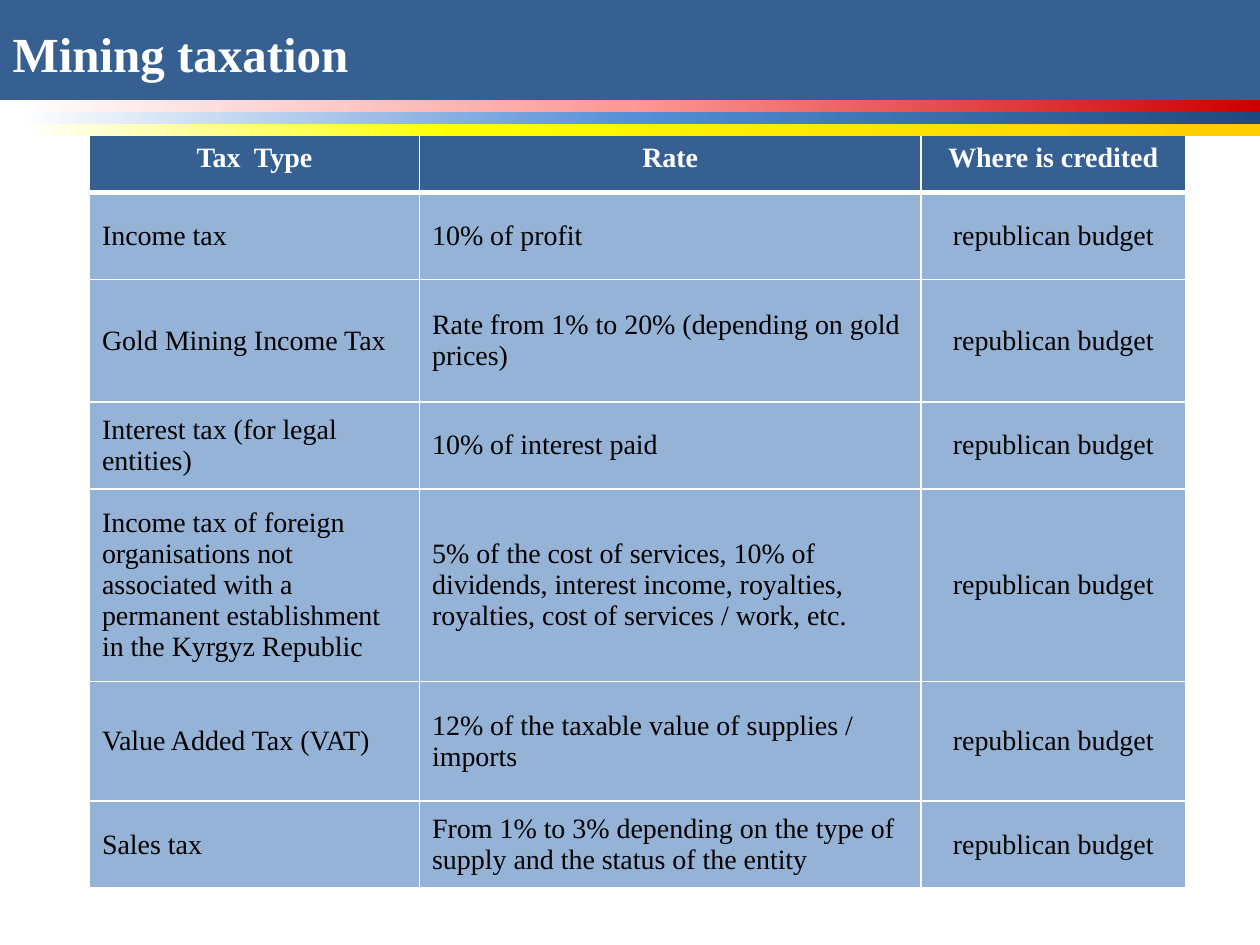
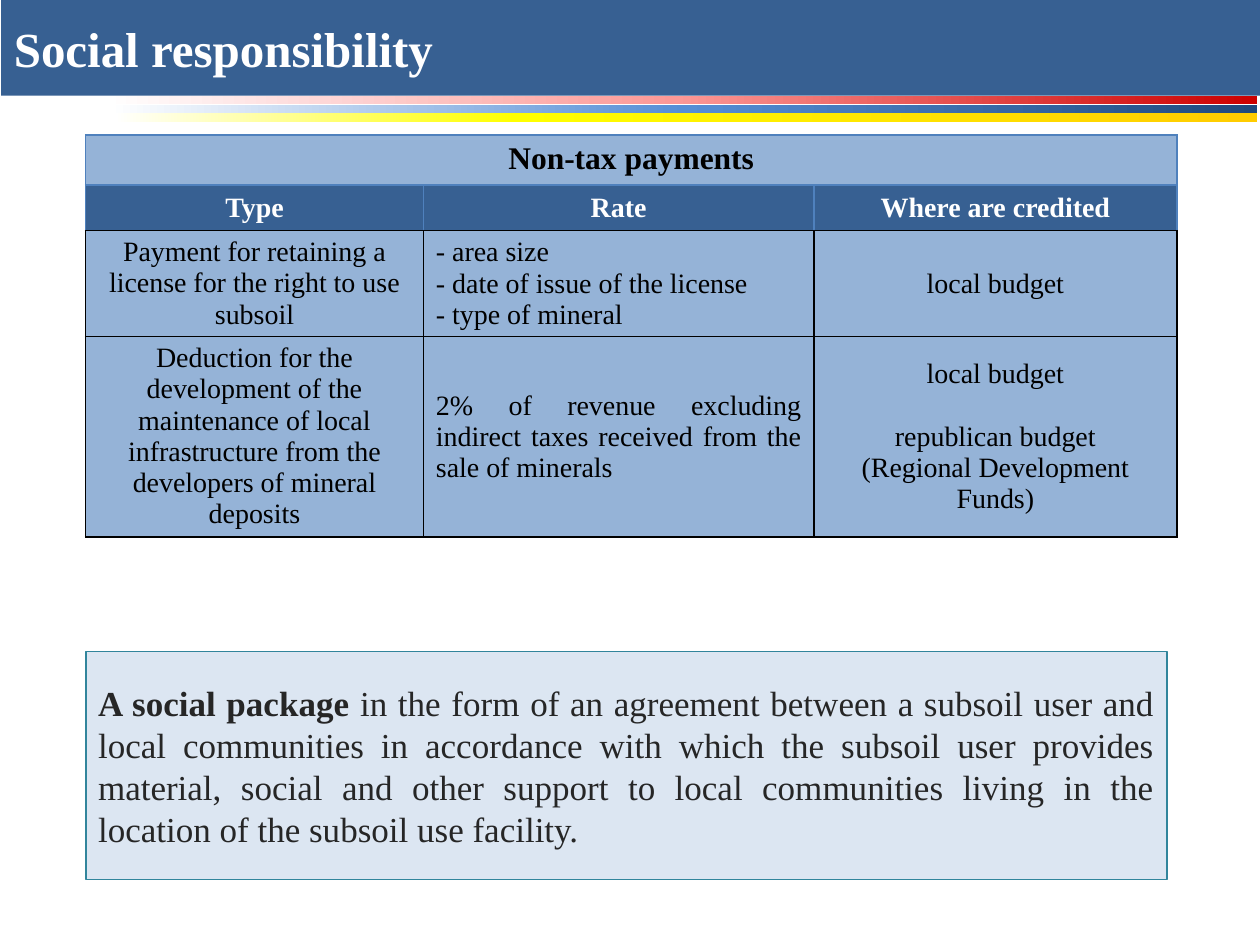
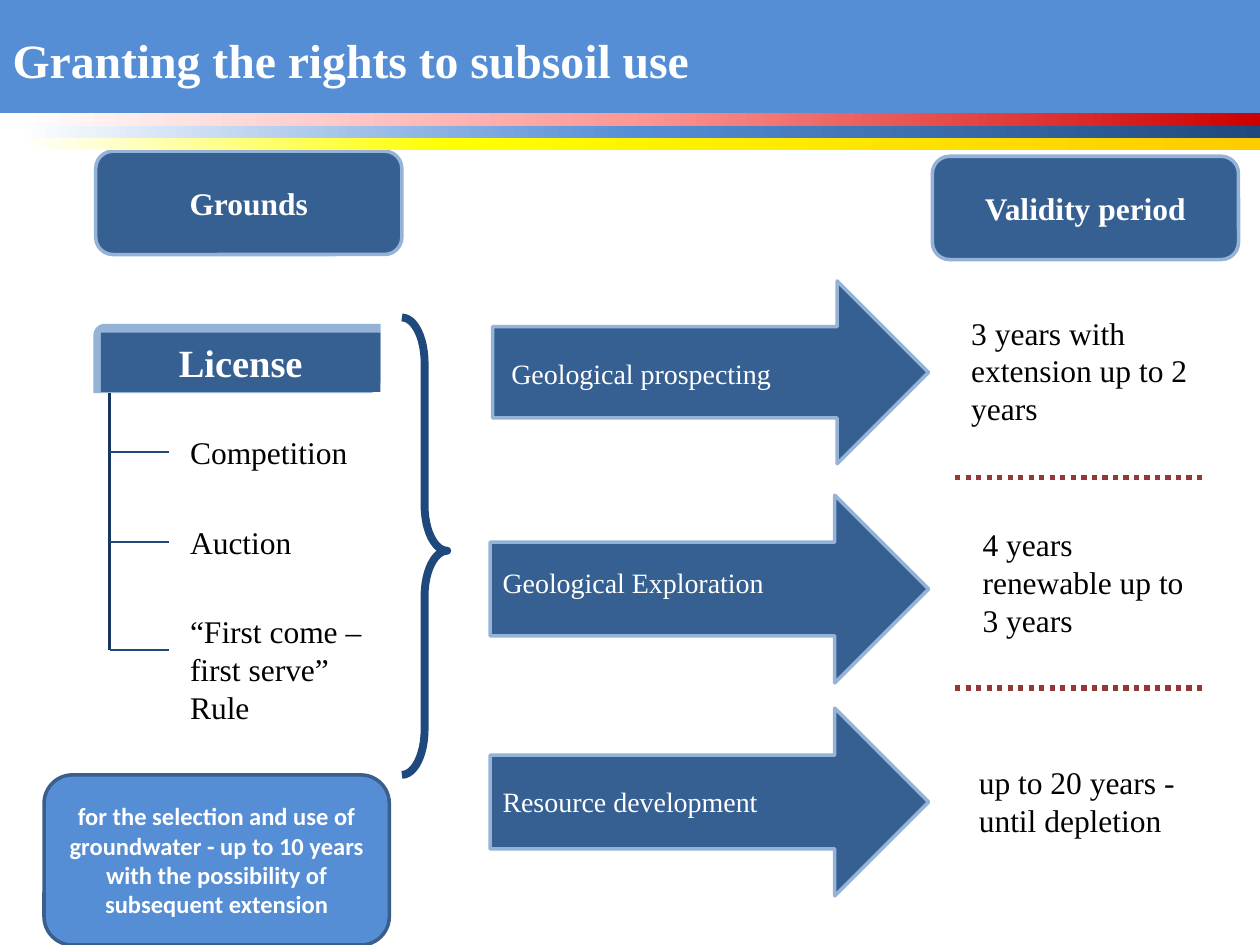
from dataclasses import dataclass

from lxml.etree import SubElement
from pptx import Presentation
from pptx.dml.color import RGBColor
from pptx.enum.dml import MSO_LINE
from pptx.enum.shapes import MSO_CONNECTOR, MSO_SHAPE
from pptx.enum.text import MSO_ANCHOR, MSO_AUTO_SIZE, PP_ALIGN
from pptx.oxml.ns import qn
from pptx.util import Inches, Pt


@dataclass(frozen=True)
class Theme:
    """Colours, fonts and type sizes shared by the slides."""

    navy: str = "376092"
    blue: str = "558ED5"
    pale: str = "95B3D7"
    mist: str = "DCE6F2"
    ink: str = "1F497D"
    deep: str = "17375E"
    steel: str = "3A5F8C"
    teal: str = "31859C"
    grid: str = "4F81BD"
    brick: str = "953735"
    white: str = "FFFFFF"
    black: str = "000000"
    charcoal: str = "262626"
    serif: str = "Times New Roman"
    sans: str = "Calibri"
    title: float = 28
    heading: float = 22
    lead: float = 20
    label: float = 18
    text: float = 16
    note: float = 14


@dataclass(frozen=True)
class RowStyle:
    """Look of one table row; rules are (colour, width) pairs."""

    fill: str
    color: str
    bold: bool
    size: float
    top: tuple
    side: tuple
    bottom: tuple


THEME = Theme()
RIBBON_BANDS = (
    (0, ((1, THEME.white), (50, "FC9896"), (100, "CC0000"))),
    (0.13, ((0, THEME.white), (50, THEME.blue), (100, THEME.ink))),
    (0.17, ((0, THEME.white), (35, "FFFF00"), (100, "FFCC00"))),
)
LEFT, CENTER, JUSTIFY = PP_ALIGN.LEFT, PP_ALIGN.CENTER, PP_ALIGN.JUSTIFY
TOP, MIDDLE = MSO_ANCHOR.TOP, MSO_ANCHOR.MIDDLE


def rgb(color):
    """Turn a hex string into a colour."""
    return RGBColor.from_string(color)


def inches(box):
    """Convert a sequence of numbers to lengths."""
    return [Inches(value) for value in box]


def write(frame, text, *, size=THEME.text, color=THEME.black, bold=False, font=THEME.serif,
          align=LEFT, lead="", gaps=None):
    """Fill a text frame, one paragraph per line, with an optional bold lead-in."""
    for index, line in enumerate(text.split("\n")):
        para = frame.paragraphs[0] if index == 0 else frame.add_paragraph()
        para.alignment = align
        if gaps and index in gaps:
            para.space_before = Pt(gaps[index])
        spans = [(line, bold)]
        if lead and index == 0:
            spans.insert(0, (lead, True))
        for words, strong in spans:
            span = para.add_run()
            span.text = words
            span.font.size = Pt(size)
            span.font.name = font
            span.font.bold = strong
            span.font.color.rgb = rgb(color)


def add_block(shapes, kind, box, fill=None, line=None, width=1, text="", **style):
    """Add a preset shape with flat fill, outline and centred-height text."""
    block = shapes.add_shape(kind, *inches(box))
    block.shadow.inherit = False
    if fill:
        block.fill.solid()
        block.fill.fore_color.rgb = rgb(fill)
    else:
        block.fill.background()
    if line:
        block.line.color.rgb = rgb(line)
        block.line.width = Pt(width)
    else:
        block.line.fill.background()
    if text:
        block.text_frame.word_wrap = True
        block.text_frame.vertical_anchor = MIDDLE
        write(block.text_frame, text, **style)
    return block


def add_label(shapes, box, text, **style):
    """Add a wrapping text box."""
    frame = shapes.add_textbox(*inches(box)).text_frame
    frame.word_wrap = True
    write(frame, text, **style)


def add_rule(shapes, start, end, color, width, dash=None):
    """Add a straight line."""
    rule = shapes.add_connector(MSO_CONNECTOR.STRAIGHT, *inches(start + end))
    rule.line.color.rgb = rgb(color)
    rule.line.width = Pt(width)
    if dash:
        rule.line.dash_style = dash
    SubElement(rule._element.spPr, qn("a:effectLst"))


def add_title(page, box, text, fill=THEME.navy, size=THEME.title):
    """Turn the title placeholder into a coloured band."""
    title = page.shapes.title
    title.left, title.top, title.width, title.height = inches(box)
    title.fill.solid()
    title.fill.fore_color.rgb = rgb(fill)
    frame = title.text_frame
    frame.auto_size = MSO_AUTO_SIZE.NONE
    frame.word_wrap = True
    frame.vertical_anchor = MIDDLE
    write(frame, text, size=size, color=THEME.white, bold=True)


def add_ribbon(page, box):
    """Stack three gradient bands in the box."""
    left, top, width, height = box
    shapes = page.shapes.add_group_shape().shapes
    depth = height / len(RIBBON_BANDS)
    for index, (indent, stops) in enumerate(RIBBON_BANDS):
        band = add_block(shapes, MSO_SHAPE.RECTANGLE,
                         (left + indent, top + index * depth, width - indent, depth))
        band.fill.gradient()
        band.fill.gradient_angle = 0
        stop_list = band._element.spPr.find(qn("a:gradFill")).find(qn("a:gsLst"))
        stop_list.clear()
        for position, color in stops:
            stop = SubElement(stop_list, qn("a:gs"), pos=str(position * 1000))
            SubElement(stop, qn("a:srgbClr"), val=color)


def set_borders(cell, style):
    """Draw the four rules of a cell."""
    properties = cell._tc.get_or_add_tcPr()
    edges = {"a:lnL": style.side, "a:lnR": style.side, "a:lnT": style.top, "a:lnB": style.bottom}
    for tag, (color, width) in edges.items():
        rule = SubElement(properties, qn(tag), w=str(Pt(width)))
        SubElement(SubElement(rule, qn("a:solidFill")), qn("a:srgbClr"), val=color)


def fill_cell(cell, text, style, anchor=MIDDLE, **layout):
    """Format and fill one table cell."""
    set_borders(cell, style)
    cell.fill.solid()
    cell.fill.fore_color.rgb = rgb(style.fill)
    cell.vertical_anchor = anchor
    write(cell.text_frame, text, size=style.size, color=style.color, bold=style.bold, **layout)


def add_grid(page, corner, columns, heights):
    """Add a table with the given column widths and row heights."""
    table = page.shapes.add_table(len(heights), len(columns),
                                  *inches(corner + (sum(columns), sum(heights)))).table
    for column, width in zip(table.columns, columns):
        column.width = Inches(width)
    for row, height in zip(table.rows, heights):
        row.height = Inches(height)
    return table


def tax_table(page, corner):
    """Table of taxes, rates and budgets."""
    thin, thick = (THEME.white, 1), (THEME.white, 3)
    header = RowStyle(THEME.navy, THEME.white, True, THEME.text, thin, thin, thick)
    first = RowStyle(THEME.pale, THEME.black, False, THEME.text, thick, thin, thin)
    body = RowStyle(THEME.pale, THEME.black, False, THEME.text, thin, thin, thin)
    taxes = (
        ("Income tax", "10% of profit"),
        ("Gold Mining Income Tax", "Rate from 1% to 20% (depending on gold prices)"),
        ("Interest tax (for legal entities)", "10% of interest paid"),
        ("Income tax of foreign organisations not associated with a permanent establishment "
         "in the Kyrgyz Republic",
         "5% of the cost of services, 10% of dividends, interest income, royalties, royalties, "
         "cost of services / work, etc."),
        ("Value Added Tax (VAT)", "12% of the taxable value of supplies / imports"),
        ("Sales tax", "From 1% to 3% depending on the type of supply and the status of the entity"),
    )
    table = add_grid(page, corner, (2.62, 3.98, 2.1), (0.55, 0.69, 0.97, 0.69, 1.53, 0.95, 0.69))
    for column, text in enumerate(("Tax  Type", "Rate", "Where is credited")):
        fill_cell(table.cell(0, column), text, header, align=CENTER)
    for row, tax in enumerate(taxes, 1):
        style = first if row == 1 else body
        for column, text in enumerate(tax + ("republican budget",)):
            fill_cell(table.cell(row, column), text, style, align=CENTER if column == 2 else LEFT)


def payment_table(page, corner):
    """Table of non-tax payments."""
    blue, black = (THEME.grid, 1), (THEME.black, 1)
    banner = RowStyle(THEME.pale, THEME.black, True, THEME.label, blue, blue, blue)
    header = RowStyle(THEME.navy, THEME.white, True, THEME.text, blue, blue, black)
    body = RowStyle(THEME.pale, THEME.black, False, THEME.text, black, black, black)
    table = add_grid(page, corner, (2.68, 3.1, 2.88), (0.4, 0.36, 0.83, 1.59))
    table.cell(0, 0).merge(table.cell(0, 2))
    for column in (1, 2):
        set_borders(table.cell(0, column), banner)
    fill_cell(table.cell(0, 0), "Non-tax payments", banner, anchor=TOP, align=CENTER)
    for column, text in enumerate(("Type", "Rate", "Where are credited")):
        fill_cell(table.cell(1, column), text, header, align=CENTER)
    payments = (
        ("Payment for retaining a license for the right to use subsoil",
         "- area size\n- date of issue of the license\n- type of mineral",
         "local budget"),
        ("Deduction for the development of the maintenance of local infrastructure from the "
         "developers of mineral deposits",
         "2% of revenue excluding indirect taxes received from the sale of minerals",
         "local budget\nrepublican budget\n(Regional Development Funds)"),
    )
    for row, (kind, rate, budget) in enumerate(payments, 2):
        fill_cell(table.cell(row, 0), kind, body, anchor=TOP, align=CENTER)
        fill_cell(table.cell(row, 1), rate, body, align=JUSTIFY)
        fill_cell(table.cell(row, 2), budget, body, align=CENTER, gaps={1: 18})


def license_tree(page, box):
    """License tab with its three branches and the closing brace."""
    left, top, width, height = box
    shapes = page.shapes.add_group_shape().shapes
    add_block(shapes, MSO_SHAPE.ROUND_2_DIAG_RECTANGLE, (left, top, 2.28, 0.55), THEME.pale)
    add_block(shapes, MSO_SHAPE.RECTANGLE, (left + 0.06, top + 0.07, 2.22, 0.47), THEME.navy,
              text="License", size=THEME.heading, color=THEME.white, bold=True, align=CENTER)
    trunk = left + 0.13
    branches = (("Competition", 1.02, 0.82, 0.4), ("Auction", 1.73, 1.53, 0.4),
                ("“First come – first serve” Rule", 2.59, 2.24, 1.01))
    add_rule(shapes, (trunk, top + 0.55), (trunk, top + branches[-1][1]), THEME.deep, 1.25)
    for text, branch, label, depth in branches:
        level = top + branch
        add_rule(shapes, (trunk, level), (trunk + 0.47, level), THEME.ink, 1.25)
        add_label(shapes, (left + 0.67, top + label, 1.68, depth), text, size=THEME.label)
    brace = add_block(shapes, MSO_SHAPE.RIGHT_BRACE,
                      (left + width - 0.36, top - 0.05, 0.36, height), line=THEME.ink, width=4.5)
    brace.adjustments[0] = 1
    brace.adjustments[1] = 0.51


def stage_arrows(page):
    """Arrows for the stages of subsoil use."""
    stages = (
        ("Geological prospecting", (3.91, 2.23, 3.46, 1.45), (0.05, 0.55)),
        ("Geological Exploration", (3.89, 3.93, 3.48, 1.49), (0, 0.51)),
        ("Resource development", (3.89, 5.62, 3.48, 1.49), (0, 0.56)),
    )
    for text, box, (indent, drop) in stages:
        add_block(page.shapes, MSO_SHAPE.RIGHT_ARROW, box, THEME.navy, THEME.pale, 2)
        add_label(page.shapes, (box[0] + indent, box[1] + drop, 2.9, 0.37), text,
                  color=THEME.white)


def validity_column(page, left, width):
    """Validity periods with dotted dividers."""
    periods = (
        ("3 years with extension up to 2 years", (7.61, 2.44, 2.01, 1.01)),
        ("4 years renewable up to 3 years", (7.7, 4.12, 1.81, 1.01)),
        ("up to 20 years - until depletion", (7.67, 6.01, 1.86, 0.71)),
    )
    for text, box in periods:
        add_label(page.shapes, box, text, size=THEME.label)
    for level in (3.79, 5.46):
        add_rule(page.shapes, (left, level), (left + width, level), THEME.brick, 3,
                 MSO_LINE.ROUND_DOT)


def tax_slide(page):
    """Mining taxation slide."""
    add_title(page, (0, 0, 10, 0.84), "Mining taxation")
    tax_table(page, (0.71, 0.98))
    add_ribbon(page, (0, 0.79, 10, 0.29))


def social_slide(page):
    """Social responsibility slide."""
    add_title(page, (0.01, 0, 9.99, 0.76), "Social responsibility")
    payment_table(page, (0.68, 1.07))
    add_block(page.shapes, MSO_SHAPE.RECTANGLE, (0.68, 5.17, 8.58, 1.81), THEME.mist, THEME.teal,
              lead="A social package ",
              text="in the form of an agreement between a subsoil user and local communities in "
                   "accordance with which the subsoil user provides material, social and other "
                   "support to local communities living in the location of the subsoil use facility.",
              size=THEME.lead, color=THEME.charcoal, align=JUSTIFY)
    add_ribbon(page, (0.74, 0.76, 9.24, 0.21))


def rights_slide(page):
    """Subsoil rights slide."""
    add_title(page, (0, 0, 10, 0.94), "Granting the rights to subsoil use", THEME.blue, 27.3)
    license_tree(page, (0.74, 2.57, 2.81, 3.63))
    stage_arrows(page)
    validity_column(page, 7.58, 1.99)
    for text, left, top in (("Grounds", 0.76, 1.2), ("Validity period", 7.4, 1.24)):
        add_block(page.shapes, MSO_SHAPE.ROUNDED_RECTANGLE, (left, top, 2.43, 0.82), THEME.navy,
                  THEME.pale, 2, text, size=THEME.label, color=THEME.white, bold=True, align=CENTER)
    add_ribbon(page, (0, 0.9, 10, 0.29))
    add_block(page.shapes, MSO_SHAPE.ROUNDED_RECTANGLE, (0.35, 6.15, 2.74, 1.35), THEME.blue,
              THEME.steel, 2,
              "for the selection and use of groundwater - up to 10 years with the possibility of "
              "subsequent extension",
              size=THEME.note, color=THEME.white, bold=True, font=THEME.sans, align=CENTER)


def main():
    """Build and save the deck."""
    deck = Presentation()
    deck.slide_width, deck.slide_height = Inches(10), Inches(7.5)
    for build in (tax_slide, social_slide, rights_slide):
        build(deck.slides.add_slide(deck.slide_layouts[5]))
    deck.save("out.pptx")


if __name__ == "__main__":
    main()
